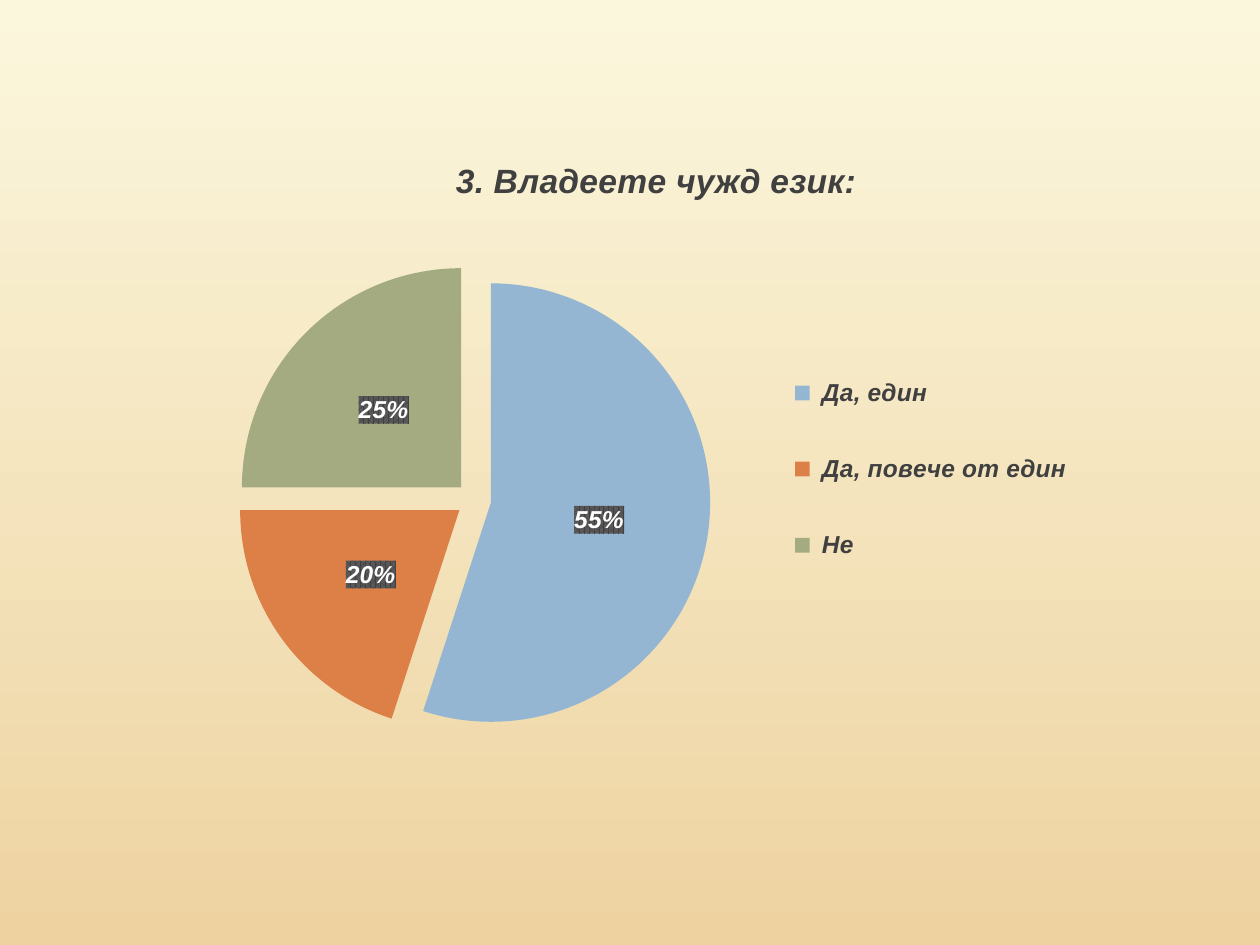
from lxml.etree import SubElement
from pptx import Presentation
from pptx.chart.data import CategoryChartData
from pptx.dml.color import RGBColor
from pptx.enum.chart import XL_CHART_TYPE, XL_LABEL_POSITION, XL_LEGEND_POSITION
from pptx.oxml import parse_xml
from pptx.oxml.ns import nsdecls, qn
from pptx.util import Cm, Pt

COLORS = {
    "sky": "FBF7DD", "sand": "EED3A1", "text": "404040", "label": "FFFFFF",
    "label_fore": "404040", "label_back": "595959",
}
# Answer, share in percent, slice colour
ANSWERS = [
    (" Да, един", 55, "94B6D2"),
    (" Да, повече от един", 20, "DD8047"),
    (" Не", 25, "A5AB81"),
]


def rgb(name):
    return RGBColor.from_string(COLORS.get(name, name))


def format_font(font, size, color):
    font.name, font.size = "Arial", Pt(size)
    font.bold = font.italic = True
    font.color.rgb = rgb(color)


def write_text(frame, text, **style):
    frame.text = text
    format_font(frame.paragraphs[0].runs[0].font, **style)


def place(part, inner=False, **fractions):
    """Give a chart part a manual layout in fractions of the chart."""
    for old in part.findall(qn("c:layout")):
        part.remove(old)
    layout = parse_xml(f"<c:layout {nsdecls('c')}/>")
    manual = SubElement(layout, qn("c:manualLayout"))
    if inner:
        SubElement(manual, qn("c:layoutTarget")).set("val", "inner")
    for key in ("x", "y"):
        SubElement(manual, qn(f"c:{key}Mode")).set("val", "edge")
    for key, value in fractions.items():
        SubElement(manual, qn(f"c:{key}")).set("val", str(value))
    before = part.find(qn("c:legendPos"))
    if before is None:
        before = part.find(qn("c:tx"))
    if before is None:
        part.insert(0, layout)
    else:
        before.addnext(layout)


def paint_background(slide):
    fill = slide.background.fill
    fill.gradient()
    fill.gradient_angle = 270
    for stop, color, position in zip(fill.gradient_stops, ("sky", "sand"), (0, 1)):
        stop.color.rgb = rgb(color)
        stop.position = position


def style_slices(plot):
    plot.vary_by_categories = True
    series = plot.series[0]
    for index, (_, _, color) in enumerate(ANSWERS):
        fill = series.points[index].format.fill
        fill.solid()
        fill.fore_color.rgb = rgb(color)
    explosion = parse_xml(f'<c:explosion {nsdecls("c")} val="8"/>')
    series._element.find(qn("c:dPt")).addprevious(explosion)


def label_slices(plot):
    labels = plot.series[0].data_labels
    labels.show_percentage, labels.show_value = True, False
    labels.number_format, labels.number_format_is_linked = "0%", False
    labels.position = XL_LABEL_POSITION.CENTER
    format_font(labels.font, size=14, color="label")
    # Patterned box behind each label
    box = parse_xml(
        f'<c:spPr {nsdecls("c", "a")}><a:pattFill prst="pct75">'
        f'<a:fgClr><a:srgbClr val="{COLORS["label_fore"]}"/></a:fgClr>'
        f'<a:bgClr><a:srgbClr val="{COLORS["label_back"]}"/></a:bgClr>'
        "</a:pattFill></c:spPr>")
    labels._element.find(qn("c:txPr")).addprevious(box)


def add_language_chart(slide, left, top, width, height):
    data = CategoryChartData()
    data.categories = [answer for answer, _, _ in ANSWERS]
    data.add_series("Series 1", [share for _, share, _ in ANSWERS])
    chart = slide.shapes.add_chart(
        XL_CHART_TYPE.PIE, left, top, width, height, data).chart
    format_font(chart.font, size=16, color="text")

    # Question
    chart.has_title = True
    write_text(chart.chart_title.text_frame, "3. Владеете чужд език:",
               size=19.2, color="text")
    place(chart.chart_title._element, x=0.29, y=0.03)

    # Pie
    pie = chart.plots[0]
    style_slices(pie)
    label_slices(pie)
    place(chart._chartSpace.chart.plotArea, inner=True,
          x=0, y=0.21, w=0.63, h=0.77)

    # Legend
    chart.has_legend = True
    chart.legend.position = XL_LEGEND_POSITION.RIGHT
    chart.legend.include_in_layout = False
    format_font(chart.legend.font, size=14, color="text")
    place(chart.legend._element, x=0.63, y=0.32, w=0.33, h=0.45)


def main():
    deck = Presentation()
    deck.slide_width, deck.slide_height = Cm(25.4), Cm(19.05)
    slide = deck.slides.add_slide(deck.slide_layouts[6])
    paint_background(slide)
    add_language_chart(slide, Cm(3.5), Cm(2.7), Cm(19.2), Cm(12.4))
    deck.save("out.pptx")


if __name__ == "__main__":
    main()
